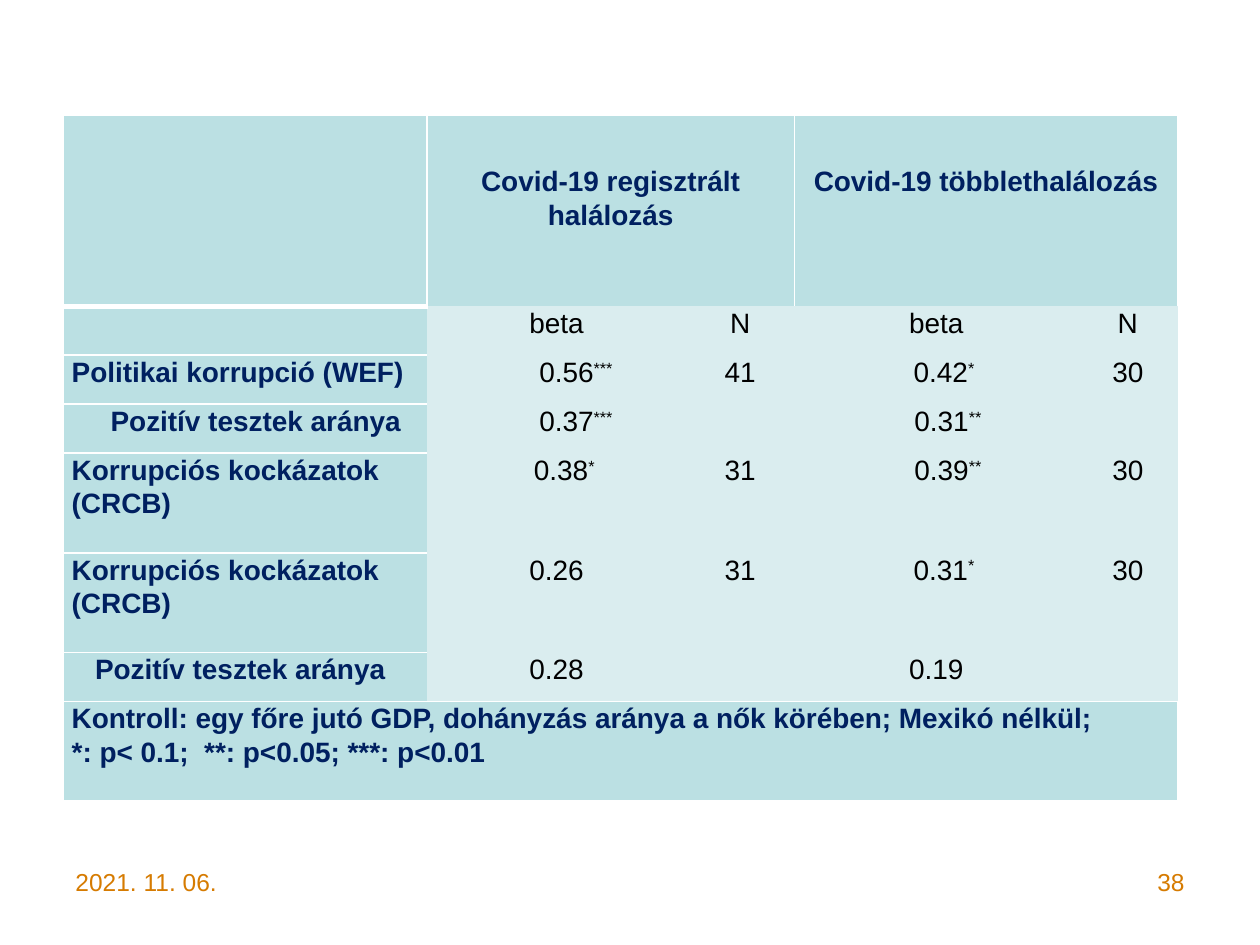
from lxml import etree
from pptx import Presentation
from pptx.dml.color import RGBColor
from pptx.enum.text import PP_ALIGN
from pptx.oxml.ns import qn
from pptx.util import Pt

LEFT, CENTER, RIGHT = PP_ALIGN.LEFT, PP_ALIGN.CENTER, PP_ALIGN.RIGHT
NAVY, BLACK, WHITE, AMBER = "002060", "000000", "FFFFFF", "D67B01"
TEAL, PALE = "BBE0E3", "DAEDEF"
SPACE = 4.45
WIDTHS = [208, 148, 62, 162, 57]
HEIGHTS = [109, 28, 28, 28, 57, 57, 28, 57]
MERGES = [(0, 1, 0, 2), (0, 3, 0, 4), (2, 2, 3, 2), (2, 4, 3, 4),
          (5, 2, 6, 2), (5, 4, 6, 4), (7, 0, 7, 4)]
NOTE = ("Kontroll: egy főre jutó GDP, dohányzás aránya a nők körében; Mexikó nélkül;\n"
        "*: p< 0.1;  **: p<0.05; ***: p<0.01")
RISK = "Korrupciós kockázatok (CRCB)"
TESTS = "Pozitív tesztek aránya"
ROWS = [
    ["", "Covid-19 regisztrált halálozás", "", "Covid-19 többlethalálozás", ""],
    ["", "beta", "N", "beta", "N"],
    ["Politikai korrupció (WEF)", "0.56***", "41", "0.42*", "30"],
    [TESTS, "0.37***", "", "0.31**", ""],
    [RISK, "0.38*", "31", "0.39**", "30"],
    [RISK, "0.26", "31", "0.31*", "30"],
    [TESTS, "0.28", "", "0.19", ""],
    [NOTE, "", "", "", ""],
]
INDENTS = {(2, 1): 5, (2, 3): 2, (3, 0): 5, (3, 1): 5, (3, 3): 3,
           (4, 1): 2, (4, 3): 3, (5, 3): 2, (6, 0): 3}


def color(value):
    """Turn a hex string into a colour."""
    return RGBColor.from_string(value)


def style(font, size, tint, bold=False):
    """Set the face, size, colour and weight of a font."""
    font.name, font.size, font.bold = "Arial", Pt(size), bold
    font.color.rgb = color(tint)


def label(slide, left, text, align):
    """Add one footer text box."""
    frame = slide.shapes.add_textbox(Pt(left), Pt(492), Pt(168), Pt(37)).text_frame
    frame.word_wrap = True
    frame.text = text
    para = frame.paragraphs[0]
    para.alignment = align
    style(para.runs[0].font, 14, AMBER)


def edges(cell, widths):
    """Draw white borders for left, right, top and bottom; zero hides one."""
    props = cell._tc.get_or_add_tcPr()
    for side, width in zip("LRTB", widths):
        line = etree.SubElement(props, qn("a:ln" + side), w=str(Pt(width)))
        if width:
            fill = etree.SubElement(line, qn("a:solidFill"))
            etree.SubElement(fill, qn("a:srgbClr"), val=WHITE)
        else:
            etree.SubElement(line, qn("a:noFill"))


def borders(row, col):
    """Give the four border widths of a cell by its place."""
    if row == 7:
        return 1, 1, 1, 1
    if row == 0:
        return 1, 1, 1, 0 if col else 3
    if col == 0:
        return 1, 0, 3 if row == 1 else 1, 1
    return 0, 0, 0, 1 if row == 6 else 0


def write(cell, text, tint, bold, align):
    """Fill a cell with text, raising its significance stars."""
    para = cell.text_frame.paragraphs[0]
    value = text.rstrip("*")
    stars = text[len(value):]
    para.text = value
    if stars:
        para.add_run().text = stars
    para.alignment = align
    para.line_spacing, para.space_after = 1.07, Pt(8)
    style(para.font, 16, tint, bold)
    for run in para.runs:
        style(run.font, 16, tint, bold)
    if stars:
        para.runs[-1].font._element.set("baseline", "30000")


def grid(slide):
    """Add the table of regression results."""
    table = slide.shapes.add_table(len(ROWS), len(WIDTHS), Pt(36), Pt(66),
                                   Pt(sum(WIDTHS)), Pt(sum(HEIGHTS))).table
    table.first_row = table.horz_banding = False
    for col, width in zip(table.columns, WIDTHS):
        col.width = Pt(width)
    for row, height in zip(table.rows, HEIGHTS):
        row.height = Pt(height)
    for top, left, low, right in MERGES:
        table.cell(top, left).merge(table.cell(low, right))
    for row, texts in enumerate(ROWS):
        for col, text in enumerate(texts):
            cell = table.cell(row, col)
            head = row in (0, 7) or col == 0
            cell.margin_left = Pt(5 + SPACE * INDENTS.get((row, col), 0))
            cell.margin_right = Pt(5)
            cell.margin_top = Pt(28 if row == 0 else 0)
            cell.margin_bottom = 0
            edges(cell, borders(row, col))
            cell.fill.solid()
            cell.fill.fore_color.rgb = color(TEAL if head else PALE)
            write(cell, text, NAVY if head else BLACK, head, CENTER if col else LEFT)


def main():
    """Build and save the slide."""
    deck = Presentation()
    deck.slide_width, deck.slide_height = Pt(720), Pt(540)
    slide = deck.slides.add_slide(deck.slide_layouts[6])
    label(slide, 36, "2021. 11. 06.", LEFT)
    label(slide, 516, "38", RIGHT)
    grid(slide)
    deck.save("out.pptx")


if __name__ == "__main__":
    main()
